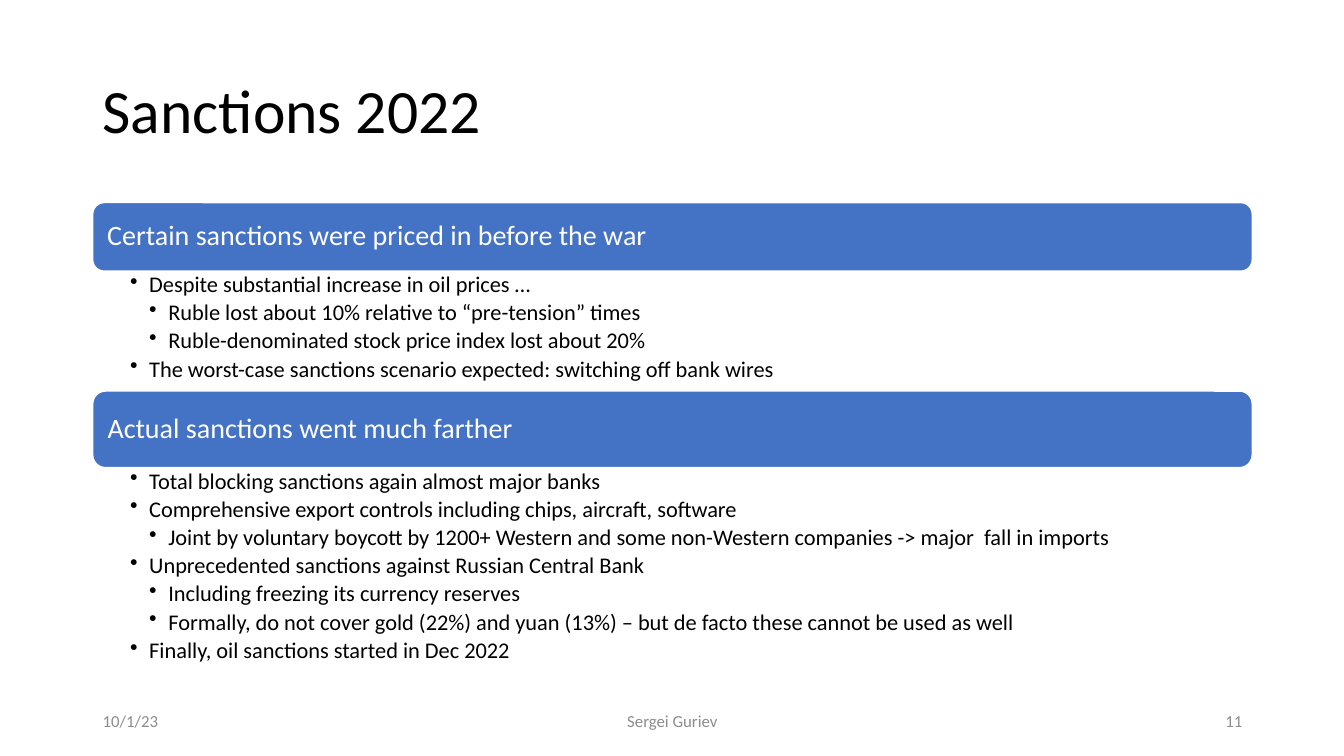
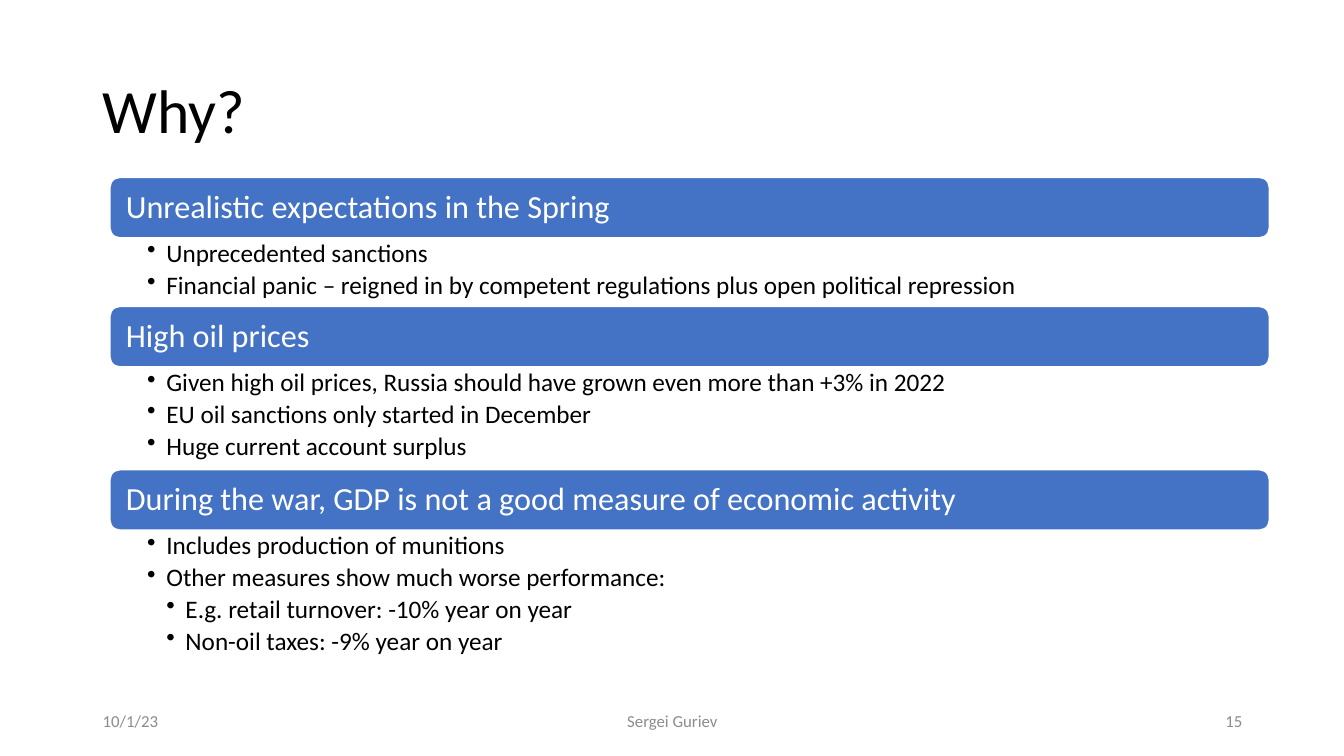
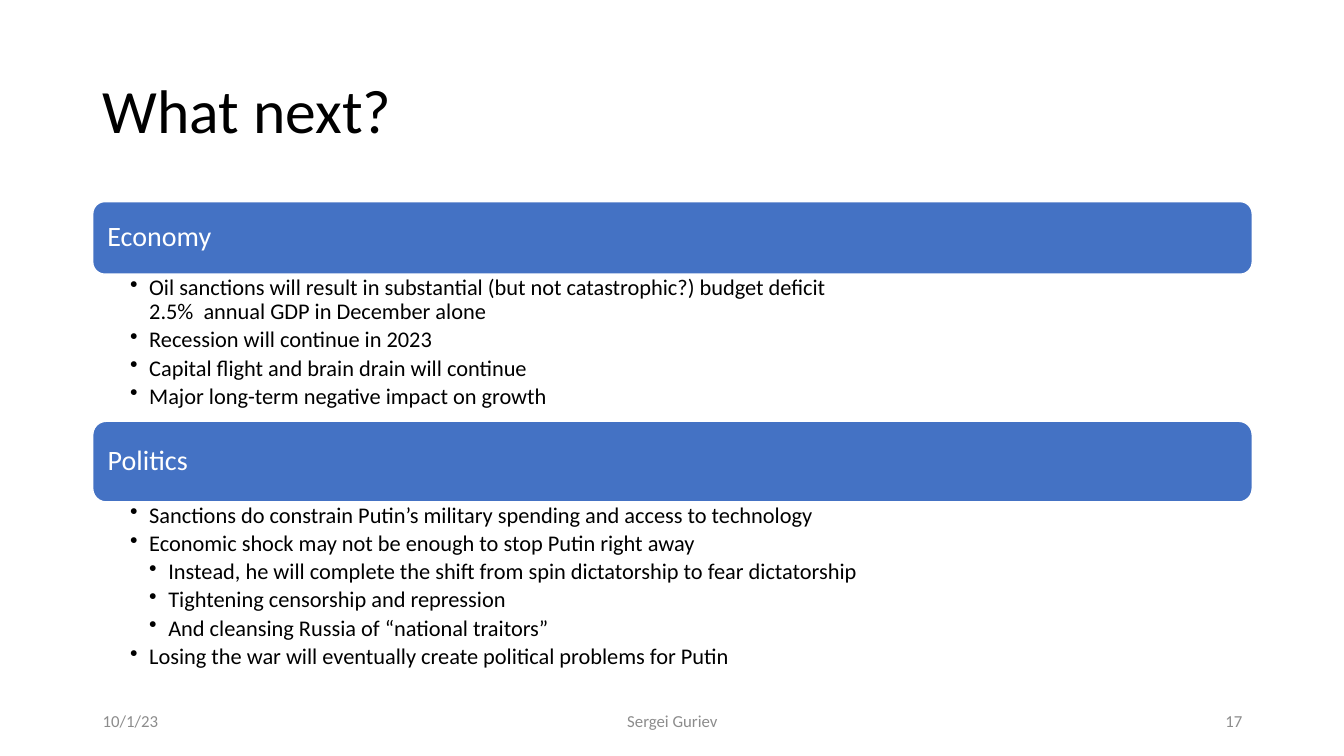
import pptx
import pptx.dml.color
import pptx.enum.shapes
import pptx.enum.text
import pptx.oxml.ns
import pptx.util
import lxml.etree

Inches = pptx.util.Inches
Align = pptx.enum.text.PP_ALIGN
Anchor = pptx.enum.text.MSO_ANCHOR


def colour(value):
    return pptx.dml.color.RGBColor.from_string(value)


class Talk:
    FONT = "Calibri"
    BLUE = "4472C4"
    WHITE = "FFFFFF"
    BLACK = "000000"
    GREY = "8C8C8C"
    LEFT = 0.92
    WIDTH = 11.5
    STEP = 0.19

    def __init__(self):
        self.deck = pptx.Presentation()
        self.deck.slide_width = Inches(13.33)
        self.deck.slide_height = Inches(7.5)
        self.page = None

    def add_page(self, title, number):
        self.page = self.deck.slides.add_slide(self.deck.slide_layouts[6])
        frame = self.text_box(self.LEFT, 0.4, self.WIDTH, 1.45, Anchor.MIDDLE)
        self.style(frame.paragraphs[0], title, 44, self.BLACK, spacing=0.9)
        footers = (
            ("10/1/23", self.LEFT, 3, Align.LEFT),
            ("Sergei Guriev", 4.42, 4.5, Align.CENTER),
            (number, 9.42, 3, Align.RIGHT),
        )
        for text, left, width, align in footers:
            frame = self.text_box(left, 6.95, width, 0.4, Anchor.MIDDLE)
            self.style(frame.paragraphs[0], text, 12, self.GREY, align)

    def text_box(self, left, top, width, height, anchor):
        box = self.page.shapes.add_textbox(
            Inches(left), Inches(top), Inches(width), Inches(height))
        frame = box.text_frame
        frame.word_wrap = True
        frame.vertical_anchor = anchor
        return frame

    def style(self, paragraph, text, size, ink, align=Align.LEFT, spacing=1.0):
        paragraph.text = text
        paragraph.alignment = align
        paragraph.line_spacing = spacing
        font = paragraph.font
        font.name = self.FONT
        font.size = pptx.util.Pt(size)
        font.color.rgb = colour(ink)

    def bullet(self, paragraph, level):
        properties = paragraph._p.get_or_add_pPr()
        properties.set("marL", str(Inches(self.STEP * level)))
        properties.set("indent", str(-Inches(self.STEP)))
        mark = lxml.etree.SubElement(properties, pptx.oxml.ns.qn("a:buChar"))
        mark.set("char", "•")

    def heading(self, text, left, top, height, size, inset):
        bar = self.page.shapes.add_shape(
            pptx.enum.shapes.MSO_SHAPE.ROUNDED_RECTANGLE,
            Inches(left), Inches(top), Inches(self.WIDTH), Inches(height))
        bar.shadow.inherit = False
        bar.fill.solid()
        bar.fill.fore_color.rgb = colour(self.BLUE)
        bar.line.color.rgb = colour(self.WHITE)
        bar.line.width = pptx.util.Pt(1)
        frame = bar.text_frame
        frame.word_wrap = True
        frame.vertical_anchor = Anchor.MIDDLE
        frame.margin_left = frame.margin_right = Inches(inset)
        self.style(frame.paragraphs[0], text, size, self.WHITE, spacing=0.9)

    def bullets(self, items, left, top, height, size, inset):
        frame = self.text_box(left, top, self.WIDTH, height, Anchor.TOP)
        frame.margin_left = Inches(0.37)
        frame.margin_right = Inches(0.12)
        frame.margin_top = frame.margin_bottom = Inches(inset)
        for index, (level, text) in enumerate(items):
            paragraph = frame.paragraphs[0] if index == 0 else frame.add_paragraph()
            paragraph.space_after = pptx.util.Pt(0.18 * size)
            self.bullet(paragraph, level)
            self.style(paragraph, text, size, self.BLACK, spacing=0.9)

    def sections(self, sections, left, top, heading_size, body_size,
                 heading_inset, body_inset):
        for text, bar_height, body_height, items in sections:
            self.heading(text, left, top, bar_height, heading_size, heading_inset)
            top += bar_height
            self.bullets(items, left, top, body_height, body_size, body_inset)
            top += body_height


COMPACT = dict(left=Talk.LEFT, heading_size=20, body_size=16,
               heading_inset=0.11, body_inset=0.02)
LARGE = dict(left=1.09, heading_size=23, body_size=18,
             heading_inset=0.13, body_inset=0.03)

SANCTIONS = [
    ("Certain sanctions were priced in before the war", 0.68, 1.19, [
        (1, "Despite substantial increase in oil prices …"),
        (2, "Ruble lost about 10% relative to “pre-tension” times"),
        (2, "Ruble-denominated stock price index lost about 20%"),
        (1, "The worst-case sanctions scenario expected: switching off bank wires"),
    ]),
    ("Actual sanctions went much farther", 0.76, 2.11, [
        (1, "Total blocking sanctions again almost major banks"),
        (1, "Comprehensive export controls including chips, aircraft, software"),
        (2, "Joint by voluntary boycott by 1200+ Western and some non-Western "
            "companies -> major  fall in imports"),
        (1, "Unprecedented sanctions against Russian Central Bank"),
        (2, "Including freezing its currency reserves"),
        (2, "Formally, do not cover gold (22%) and yuan (13%) – but de facto "
            "these cannot be used as well"),
        (1, "Finally, oil sanctions started in Dec 2022"),
    ]),
]

REASONS = [
    ("Unrealistic expectations in the Spring", 0.6, 0.68, [
        (1, "Unprecedented sanctions"),
        (1, "Financial panic – reigned in by competent regulations plus open "
            "political repression"),
    ]),
    ("High oil prices", 0.6, 1.02, [
        (1, "Given high oil prices, Russia should have grown even more than "
            "+3% in 2022"),
        (1, "EU oil sanctions only started in December"),
        (1, "Huge current account surplus"),
    ]),
    ("During the war, GDP is not a good measure of economic activity", 0.6, 1.35, [
        (1, "Includes production of munitions"),
        (1, "Other measures show much worse performance:"),
        (2, "E.g. retail turnover: -10% year on year"),
        (2, "Non-oil taxes: -9% year on year"),
    ]),
]

OUTLOOK = [
    ("Economy", 0.72, 1.46, [
        (1, "Oil sanctions will result in substantial (but not catastrophic?) "
            "budget deficit\v2.5%  annual GDP in December alone"),
        (1, "Recession will continue in 2023"),
        (1, "Capital flight and brain drain will continue"),
        (1, "Major long-term negative impact on growth"),
    ]),
    ("Politics", 0.8, 1.78, [
        (1, "Sanctions do constrain Putin’s military spending and access to "
            "technology"),
        (1, "Economic shock may not be enough to stop Putin right away"),
        (2, "Instead, he will complete the shift from spin dictatorship to "
            "fear dictatorship"),
        (2, "Tightening censorship and repression"),
        (2, "And cleansing Russia of “national traitors”"),
        (1, "Losing the war will eventually create political problems for Putin"),
    ]),
]


def main():
    talk = Talk()
    pages = (
        ("Sanctions 2022", "11", SANCTIONS, 2.01, COMPACT),
        ("Why?", "15", REASONS, 1.76, LARGE),
        ("What next?", "17", OUTLOOK, 2.0, COMPACT),
    )
    for title, number, sections, top, sizes in pages:
        talk.add_page(title, number)
        talk.sections(sections, top=top, **sizes)
    talk.deck.save("out.pptx")


if __name__ == "__main__":
    main()
